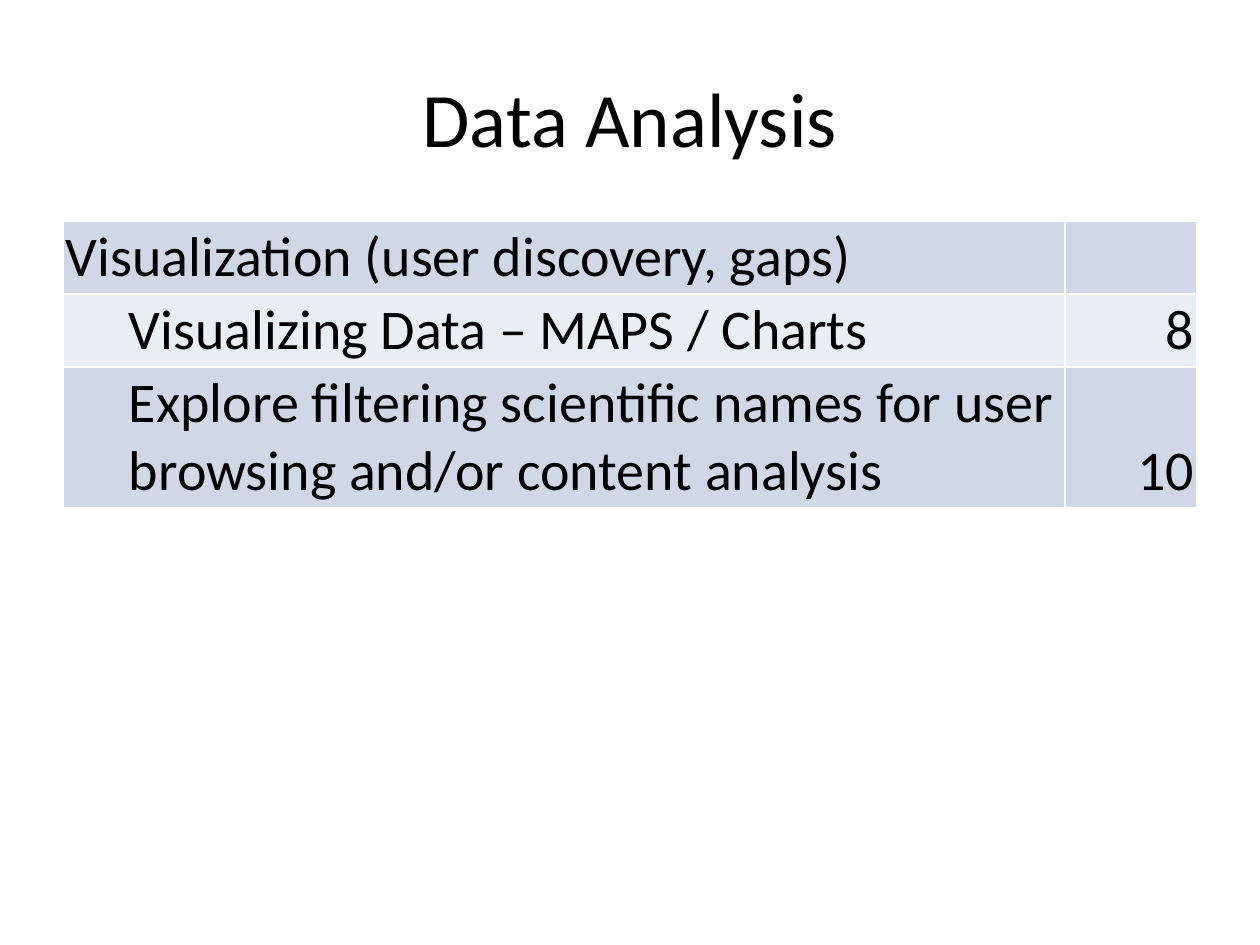
from lxml import etree
from pptx import Presentation
from pptx import util as u
from pptx.dml.color import RGBColor
from pptx.enum import text
from pptx.oxml.ns import qn

# Content: (topic, indent level, count)
TITLE = "Data Analysis"
ROWS = [
    ("Visualization (user discovery, gaps)", 0, ""),
    ("Visualizing Data – MAPS / Charts", 1, "8"),
    ("Explore filtering scientific names for user browsing "
     "and/or content analysis", 1, "10"),
]
COL_WIDTHS = [1002, 132]
ROW_HEIGHTS = [73, 73, 140]
BANDS = ["D0D8E8", "E9EDF4"]
FONT, BLACK, WHITE = "Calibri", "000000", "FFFFFF"


def px(n):
    return u.Emu(round(n * 914400 / 126))


def color(value):
    return RGBColor.from_string(value)


def style(p, size, align):
    p.alignment = align
    p.font.name, p.font.size = FONT, u.Pt(size)
    p.font.color.rgb = color(BLACK)


def add_borders(cell):
    tc_pr = cell._tc.get_or_add_tcPr()
    for i, side in enumerate(("lnL", "lnR", "lnT", "lnB")):
        ln = etree.Element(qn("a:" + side), w=str(u.Pt(1)))
        fill = etree.SubElement(ln, qn("a:solidFill"))
        etree.SubElement(fill, qn("a:srgbClr"), val=WHITE)
        tc_pr.insert(i, ln)


def fill_cell(cell, words, level, align, band):
    cell.fill.solid()
    cell.fill.fore_color.rgb = color(band)
    cell.margin_left = cell.margin_right = px(3)
    cell.margin_top = cell.margin_bottom = px(2)
    cell.vertical_anchor = text.MSO_ANCHOR.BOTTOM
    p = cell.text_frame.paragraphs[0]
    p.text, p.level = words, level
    style(p, 32, align)
    if level:
        p._p.get_or_add_pPr().set("marL", str(px(63 * level)))
    add_borders(cell)


prs = Presentation()
prs.slide_width, prs.slide_height = px(1260), px(945)
s = prs.slides.add_slide(prs.slide_layouts[5])

# Title
title = s.shapes.title
title.left, title.top, title.width, title.height = map(px, (63, 38, 1134, 157))
title.text_frame.text = TITLE
title.text_frame.vertical_anchor = text.MSO_ANCHOR.MIDDLE
style(title.text_frame.paragraphs[0], 44, text.PP_ALIGN.CENTER)

# Table
table = s.shapes.add_table(len(ROWS), len(COL_WIDTHS), px(63), px(221),
                           px(sum(COL_WIDTHS)), px(sum(ROW_HEIGHTS))).table
table.first_row = False
for col, width in zip(table.columns, COL_WIDTHS):
    col.width = px(width)
for i, (topic, level, count) in enumerate(ROWS):
    table.rows[i].height = px(ROW_HEIGHTS[i])
    band = BANDS[i % 2]
    fill_cell(table.cell(i, 0), topic, level, text.PP_ALIGN.LEFT, band)
    fill_cell(table.cell(i, 1), count, 0, text.PP_ALIGN.RIGHT, band)

prs.save("out.pptx")
